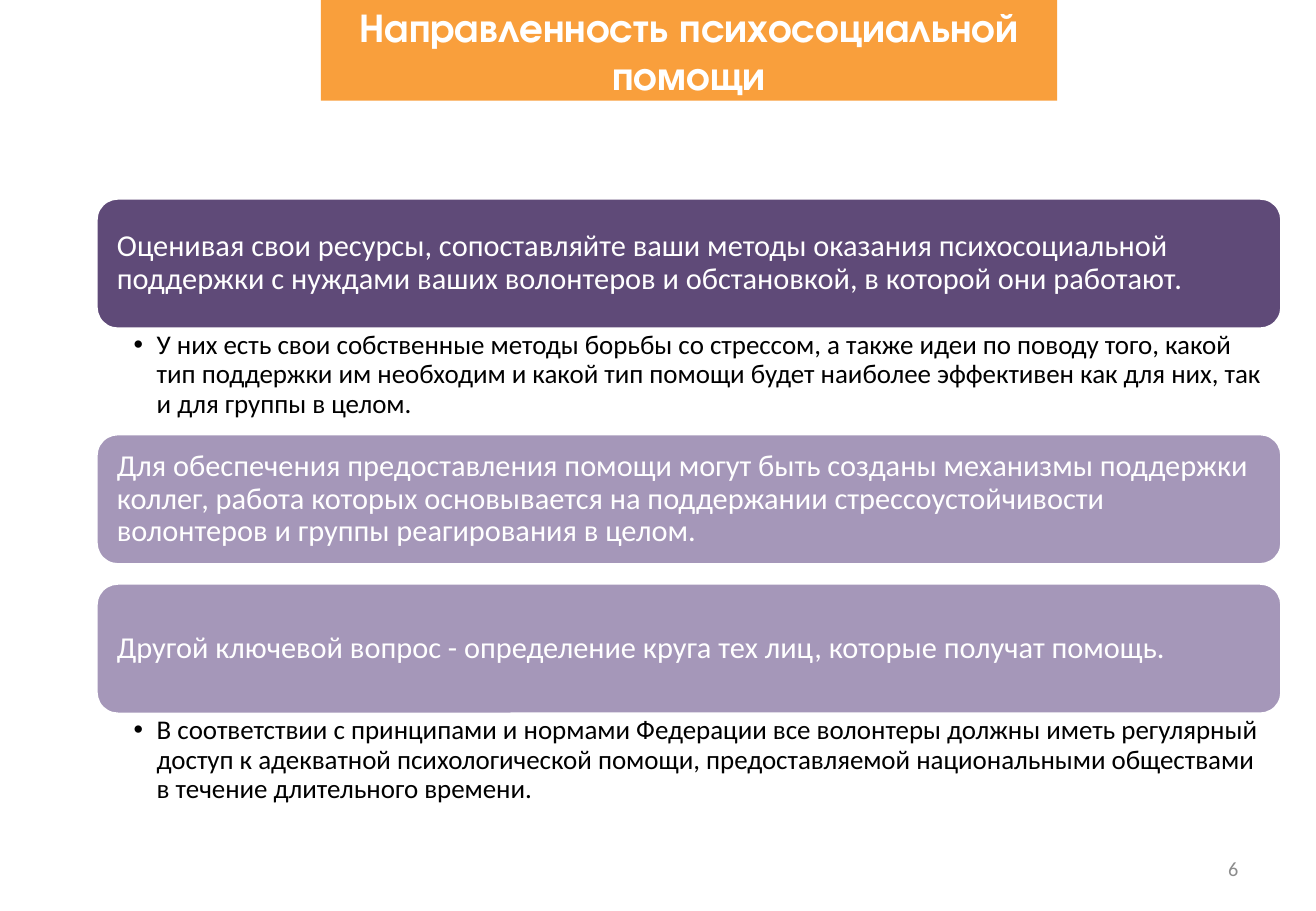
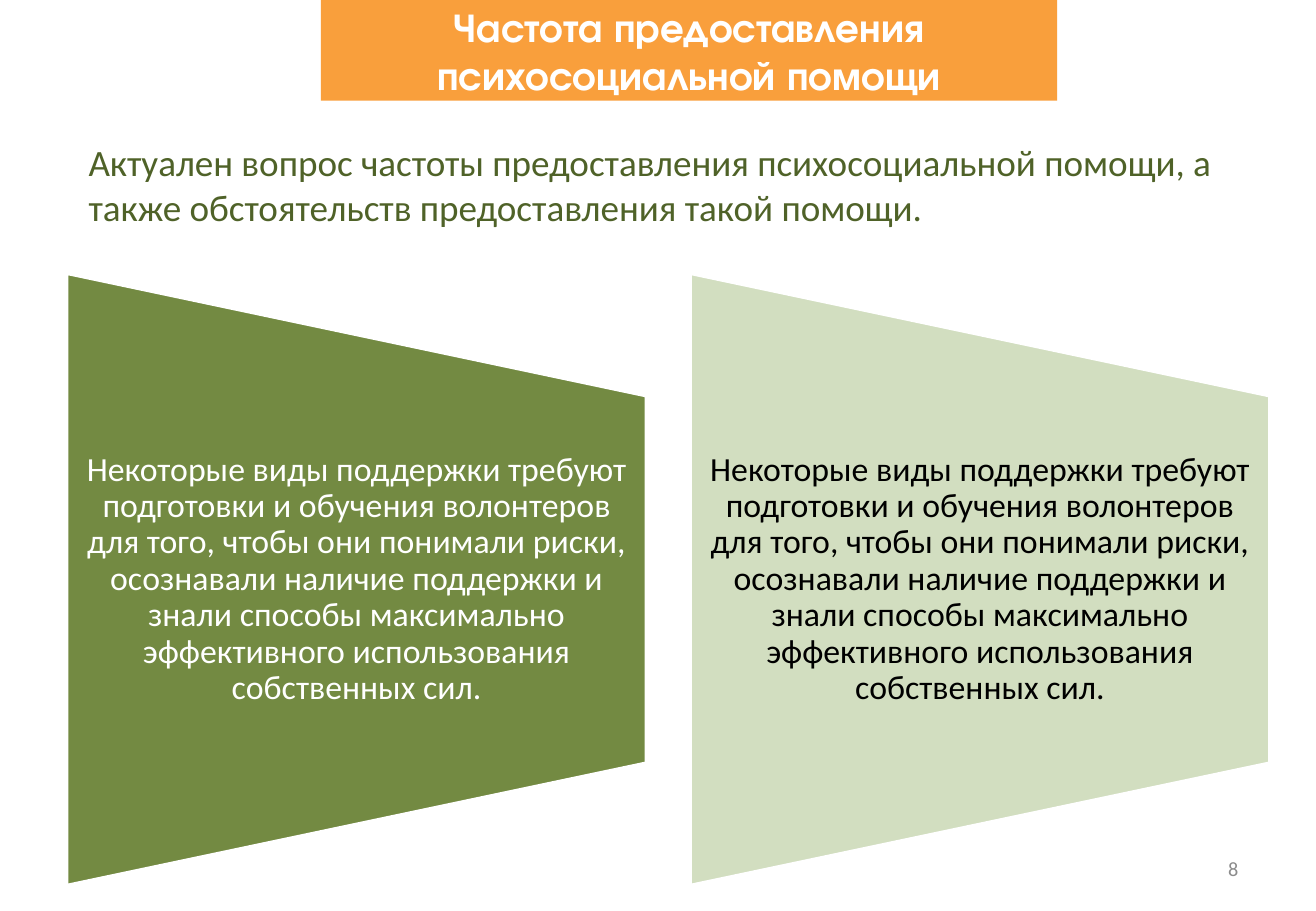
from dataclasses import dataclass

from lxml.etree import SubElement
from pptx import Presentation
from pptx.dml.color import RGBColor
from pptx.enum.shapes import MSO_SHAPE
from pptx.enum.text import MSO_ANCHOR, PP_ALIGN
from pptx.oxml.ns import qn
from pptx.util import Inches, Pt


@dataclass(frozen=True)
class Theme:
    title_font: str = "TeX Gyre Adventor"
    body_font: str = "Calibri"
    orange: str = "F99F3C"
    white: str = "FFFFFF"
    black: str = "000000"
    gray: str = "8C8C8C"
    purple: str = "5F4A78"
    lilac: str = "A597B9"
    green: str = "738A42"
    pale_green: str = "D2DEC0"
    dark_green: str = "4F6228"
    title_size: int = 24
    lead_size: int = 22
    panel_size: int = 20
    card_size: int = 18
    detail_size: int = 16
    number_size: int = 12
    outline: int = 2
    tight: float = 0.9


THEME = Theme()

FOCUS_TITLE = "Направленность психосоциальной помощи"
FOCUS_NUMBER = "6"
FOCUS_CARDS = [
    (
        "Оценивая свои ресурсы, сопоставляйте ваши методы оказания психосоциальной "
        "поддержки с нуждами ваших волонтеров и обстановкой, в которой они работают.",
        "У них есть свои собственные методы борьбы со стрессом, а также идеи по поводу "
        "того, какой тип поддержки им необходим и какой тип помощи будет наиболее "
        "эффективен как для них, так и для группы в целом.",
        THEME.purple,
    ),
    (
        "Для обеспечения предоставления помощи могут быть созданы механизмы поддержки "
        "коллег, работа которых основывается на поддержании стрессоустойчивости "
        "волонтеров и группы реагирования в целом.",
        None,
        THEME.lilac,
    ),
    (
        "Другой ключевой вопрос - определение круга тех лиц, которые получат помощь.",
        "В соответствии с принципами и нормами Федерации все волонтеры должны иметь "
        "регулярный доступ к адекватной психологической помощи, предоставляемой "
        "национальными обществами в течение длительного времени.",
        THEME.lilac,
    ),
]

FREQUENCY_TITLE = "Частота предоставления психосоциальной помощи"
FREQUENCY_NUMBER = "8"
FREQUENCY_LEAD = (
    "Актуален вопрос частоты предоставления психосоциальной помощи, "
    "а также обстоятельств предоставления такой помощи."
)
TRAINING = (
    "Некоторые виды поддержки требуют подготовки и обучения волонтеров для того, "
    "чтобы они понимали риски, осознавали наличие поддержки и знали способы "
    "максимально эффективного использования собственных сил."
)
FREQUENCY_PANELS = [
    (TRAINING, THEME.green, THEME.white),
    (TRAINING, THEME.pale_green, THEME.black),
]


def write(shape, text, size, color, align=PP_ALIGN.LEFT, anchor=MSO_ANCHOR.MIDDLE,
          insets=(0.1, 0.05, 0.1, 0.05), spacing=None, hanging=None,
          font=THEME.body_font, bold=False):
    frame = shape.text_frame
    frame.word_wrap = True
    frame.vertical_anchor = anchor
    (frame.margin_left, frame.margin_top,
     frame.margin_right, frame.margin_bottom) = map(Inches, insets)
    paragraph = frame.paragraphs[0]
    paragraph.text = text
    paragraph.alignment = align
    if spacing:
        paragraph.line_spacing = spacing
    if hanging:
        properties = paragraph._p.get_or_add_pPr()
        properties.set("marL", str(Inches(hanging)))
        properties.set("indent", str(-Inches(hanging)))
        SubElement(properties, qn("a:buFont")).set("typeface", "Arial")
        SubElement(properties, qn("a:buChar")).set("char", "•")
    paragraph.font.name = font
    paragraph.font.size = Pt(size)
    paragraph.font.bold = bold
    paragraph.font.color.rgb = RGBColor.from_string(color)


def add_block(slide, preset, box, fill, outline=None):
    block = slide.shapes.add_shape(preset, *map(Inches, box))
    block.shadow.inherit = False
    block.fill.solid()
    block.fill.fore_color.rgb = RGBColor.from_string(fill)
    if outline:
        block.line.color.rgb = RGBColor.from_string(outline)
        block.line.width = Pt(THEME.outline)
    else:
        block.line.fill.background()
    return block


def add_text(slide, box, text, size, color, **style):
    write(slide.shapes.add_textbox(*map(Inches, box)), text, size, color, **style)


def add_framed_slide(deck, title, number):
    slide = deck.slides.add_slide(deck.slide_layouts[6])
    band = add_block(slide, MSO_SHAPE.RECTANGLE, (2.64, 0, 6.06, 0.83), THEME.orange)
    write(band, title, THEME.title_size, THEME.white, align=PP_ALIGN.CENTER,
          font=THEME.title_font, bold=True)
    add_text(slide, (7.76, 6.95, 2.53, 0.4), number, THEME.number_size, THEME.gray,
             align=PP_ALIGN.RIGHT)
    return slide


def build_focus(deck):
    slide = add_framed_slide(deck, FOCUS_TITLE, FOCUS_NUMBER)
    left, top, width = 0.79, 1.63, 9.76
    card_height, detail_height, gap = 1.08, 0.86, 0.15
    for statement, detail, fill in FOCUS_CARDS:
        card = add_block(slide, MSO_SHAPE.ROUNDED_RECTANGLE,
                         (left, top, width, card_height), fill, THEME.white)
        write(card, statement, THEME.card_size, THEME.white,
              insets=(0.12,) * 4, spacing=THEME.tight)
        top += card_height
        if detail:
            add_text(slide, (left, top, width, detail_height), detail,
                     THEME.detail_size, THEME.black, anchor=MSO_ANCHOR.TOP,
                     insets=(0.31, 0.02, 0.12, 0.02), spacing=THEME.tight, hanging=0.19)
        top += detail_height if detail else gap


def build_frequency(deck):
    slide = add_framed_slide(deck, FREQUENCY_TITLE, FREQUENCY_NUMBER)
    add_text(slide, (0.63, 1.1, 9.75, 0.84), FREQUENCY_LEAD, THEME.lead_size,
             THEME.dark_green, anchor=MSO_ANCHOR.TOP)
    first_left, pitch, middle = 0.55, 5.13, 4.77
    width, height, text_height = 4.77, 5.04, 3.02
    for index, (statement, fill, color) in enumerate(FREQUENCY_PANELS):
        left = first_left + index * pitch
        panel = add_block(slide, MSO_SHAPE.FLOWCHART_MANUAL_OPERATION,
                          (left + (width - height) / 2, middle - width / 2, height, width),
                          fill, THEME.white)
        panel.rotation = 270
        add_text(slide, (left, middle - text_height / 2, width, text_height), statement,
                 THEME.panel_size, color, align=PP_ALIGN.CENTER,
                 insets=(0.14, 0, 0.14, 0), spacing=THEME.tight)


def main():
    deck = Presentation()
    deck.slide_width = Inches(10.83)
    deck.slide_height = Inches(7.5)
    build_focus(deck)
    build_frequency(deck)
    deck.save("out.pptx")


if __name__ == "__main__":
    main()
